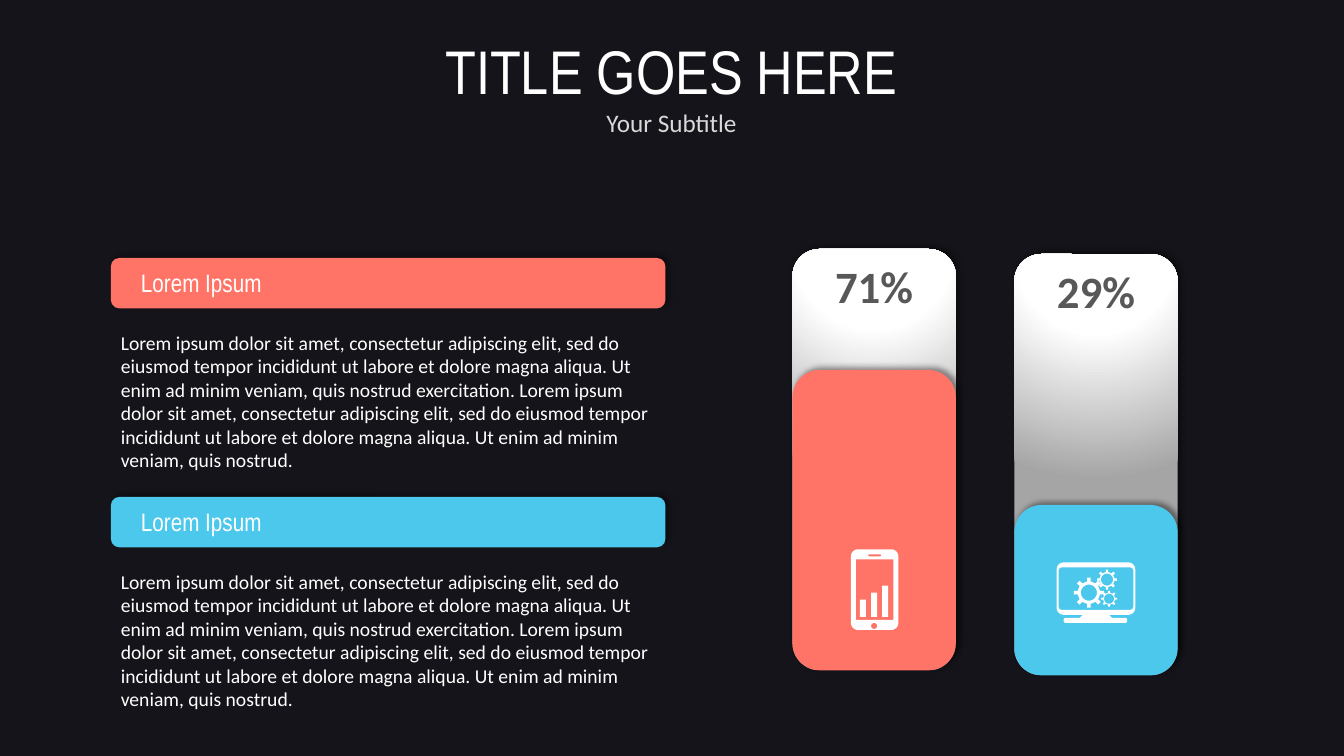
from dataclasses import dataclass
from math import cos, pi, sin
from typing import NamedTuple

from lxml import etree
from pptx import Presentation
from pptx.dml.color import RGBColor
from pptx.enum.shapes import MSO_SHAPE as Preset
from pptx.enum.text import MSO_AUTO_SIZE as AutoSize, PP_ALIGN as Align
from pptx.oxml import parse_xml
from pptx.oxml.ns import nsdecls, qn
from pptx.util import Pt

PX = 9144
BODY = (
    "Lorem ipsum dolor sit amet, consectetur adipiscing elit, sed do eiusmod tempor "
    "incididunt ut labore et dolore magna aliqua. Ut enim ad minim veniam, quis nostrud "
    "exercitation. Lorem ipsum dolor sit amet, consectetur adipiscing elit, sed do eiusmod "
    "tempor incididunt ut labore et dolore magna aliqua. Ut enim ad minim veniam, quis nostrud."
)


class Style(NamedTuple):
    font: str
    size: int
    color: str
    bold: bool = False
    align: Align = Align.LEFT


@dataclass(frozen=True)
class Theme:
    background: str = "15141A"
    white: str = "FFFFFF"
    gray: str = "A5A5A5"
    shadow: str = "000000"
    coral: str = "FF7467"
    sky: str = "4CC8EC"
    title: Style = Style("Arial Narrow", 44, "FFFFFF", align=Align.CENTER)
    subtitle: Style = Style("Calibri", 18, "D9D9D9", align=Align.CENTER)
    heading: Style = Style("Arial Narrow", 18, "FFFFFF")
    body: Style = Style("Calibri", 14, "FFFFFF")
    percent: Style = Style("Calibri", 32, "585858", True, Align.CENTER)


class Box(NamedTuple):
    left: int
    top: int
    width: int
    height: int


class Section(NamedTuple):
    top: int
    heading: str
    body: str
    color: str


class Bar(NamedTuple):
    left: int
    top: int
    filled: int
    label: str
    color: str


class Gear(NamedTuple):
    x: int
    y: int
    radius: int
    hole: int


Contour = list[tuple[float, float]]
THEME = Theme()
BAR_WIDTH, BAR_HEIGHT = 162, 418
SECTIONS = [
    Section(256, "Lorem Ipsum", BODY, THEME.coral),
    Section(493, "Lorem Ipsum", BODY, THEME.sky),
]
BARS = [
    Bar(786, 247, 298, "71%", THEME.coral),
    Bar(1006, 252, 169, "29%", THEME.sky),
]
GEARS = [Gear(1080, 588, 15, 8), Gear(1098, 575, 10, 6), Gear(1100, 594, 8, 5)]


def emu(box: Box) -> list[int]:
    return [length * PX for length in box]


def add_text(shapes, box: Box, *lines: tuple[str, Style]) -> None:
    frame = shapes.add_textbox(*emu(box)).text_frame
    frame.word_wrap = True
    frame.auto_size = AutoSize.SHAPE_TO_FIT_TEXT
    for index, (text, style) in enumerate(lines):
        paragraph = frame.add_paragraph() if index else frame.paragraphs[0]
        paragraph.text = text
        paragraph.alignment = style.align
        paragraph.font.name = style.font
        paragraph.font.size = Pt(style.size)
        paragraph.font.bold = style.bold
        paragraph.font.color.rgb = RGBColor.from_string(style.color)


def paint(shape, color: str) -> None:
    shape.shadow.inherit = False
    shape.fill.solid()
    shape.fill.fore_color.rgb = RGBColor.from_string(color)
    shape.line.fill.background()


def add_card(shapes, box: Box, color: str):
    card = shapes.add_shape(Preset.ROUNDED_RECTANGLE, *emu(box))
    paint(card, color)
    effects = card._element.spPr.find(qn("a:effectLst"))
    shadow = etree.SubElement(
        effects, qn("a:outerShdw"), blurRad=str(Pt(4)), dist=str(Pt(3)),
        dir=str(315 * 60000), algn="bl", rotWithShape="0")
    color_node = etree.SubElement(shadow, qn("a:srgbClr"), val=THEME.shadow)
    etree.SubElement(color_node, qn("a:alpha"), val="40000")
    return card


def shade_radially(shape) -> None:
    stops = "".join(
        f'<a:gs pos="{position * 1000}"><a:srgbClr val="{color}"/></a:gs>'
        for position, color in [(0, THEME.white), (35, THEME.white), (100, THEME.gray)])
    gradient = parse_xml(
        f'<a:gradFill {nsdecls("a")} rotWithShape="1"><a:gsLst>{stops}</a:gsLst>'
        '<a:path path="circle"><a:fillToRect l="50000" t="-80000" r="50000" b="180000"/>'
        '</a:path></a:gradFill>')
    properties = shape._element.spPr
    properties.replace(properties.find(qn("a:solidFill")), gradient)


def arc(x: float, y: float, radius: float, start: float, sweep: float, steps: int) -> Contour:
    angles = [start + sweep * step / steps for step in range(steps + 1)]
    return [(x + radius * cos(angle), y + radius * sin(angle)) for angle in angles]


def circle(x: float, y: float, radius: float) -> Contour:
    return arc(x, y, radius, 0, 2 * pi, 32)


def rounded(box: Box, radius: int) -> Contour:
    left, top = box.left + radius, box.top + radius
    right, bottom = box.left + box.width - radius, box.top + box.height - radius
    corners = [(right, bottom), (left, bottom), (left, top), (right, top)]
    return [point for turn, (x, y) in enumerate(corners)
            for point in arc(x, y, radius, turn * pi / 2, pi / 2, 8)]


def gear_outline(gear: Gear, teeth: int = 8) -> Contour:
    pitch = 2 * pi / teeth
    profile = [(-0.2, 0.75), (-0.16, 1), (0.16, 1), (0.2, 0.75)]
    return [(gear.x + gear.radius * reach * cos((tooth + offset) * pitch),
             gear.y + gear.radius * reach * sin((tooth + offset) * pitch))
            for tooth in range(teeth) for offset, reach in profile]


def add_outline(shapes, *contours: Contour) -> None:
    scaled = [[(x * PX, y * PX) for x, y in contour] for contour in contours]
    builder = shapes.build_freeform(*scaled[0][0], scale=1.0)
    for index, contour in enumerate(scaled):
        if index:
            builder.move_to(*contour[0])
        builder.add_line_segments(contour[1:], close=True)
    paint(builder.convert_to_shape(), THEME.white)


def add_phone(shapes) -> None:
    add_outline(
        shapes, rounded(Box(844, 545, 47, 80), 7), rounded(Box(861, 550, 13, 2), 1),
        rounded(Box(849, 555, 37, 60), 0), circle(867, 621, 3))
    for index in range(3):
        height = 17 + 7 * index
        column = Box(853 + 11 * index, 612 - height, 6, height)
        paint(shapes.add_shape(Preset.RECTANGLE, *emu(column)), THEME.white)


def add_computer(shapes) -> None:
    add_outline(
        shapes, rounded(Box(1048, 558, 78, 52), 7), rounded(Box(1050, 563, 74, 42), 3),
        [(1074, 610), (1100, 610), (1103, 613), (1071, 613)],
        rounded(Box(1055, 613, 63, 5), 2))
    for gear in GEARS:
        add_outline(shapes, gear_outline(gear), circle(gear.x, gear.y, gear.hole))


def add_section(shapes, section: Section) -> None:
    add_card(shapes, Box(110, section.top, 550, 50), section.color)
    add_text(shapes, Box(130, section.top + 4, 290, 40), (section.heading, THEME.heading))
    add_text(shapes, Box(110, section.top + 67, 550, 151), (section.body, THEME.body))


def add_bar(shapes, bar: Bar) -> None:
    shade_radially(add_card(shapes, Box(bar.left, bar.top, BAR_WIDTH, BAR_HEIGHT), THEME.white))
    filled_top = bar.top + BAR_HEIGHT - bar.filled
    add_card(shapes, Box(bar.left, filled_top, BAR_WIDTH, bar.filled), bar.color)
    add_text(shapes, Box(bar.left, bar.top + 5, BAR_WIDTH, 64), (bar.label, THEME.percent))


def main() -> None:
    presentation = Presentation()
    presentation.slide_width, presentation.slide_height = 1333 * PX, 750 * PX
    slide = presentation.slides.add_slide(presentation.slide_layouts[6])
    slide.background.fill.solid()
    slide.background.fill.fore_color.rgb = RGBColor.from_string(THEME.background)
    shapes = slide.shapes
    add_text(shapes, Box(365, 28, 602, 114),
             ("TITLE GOES HERE", THEME.title), ("Your Subtitle", THEME.subtitle))
    for section in SECTIONS:
        add_section(shapes, section)
    for bar, add_icon in zip(BARS, [add_phone, add_computer]):
        add_bar(shapes, bar)
        add_icon(shapes.add_group_shape().shapes)
    presentation.save("out.pptx")


if __name__ == "__main__":
    main()
